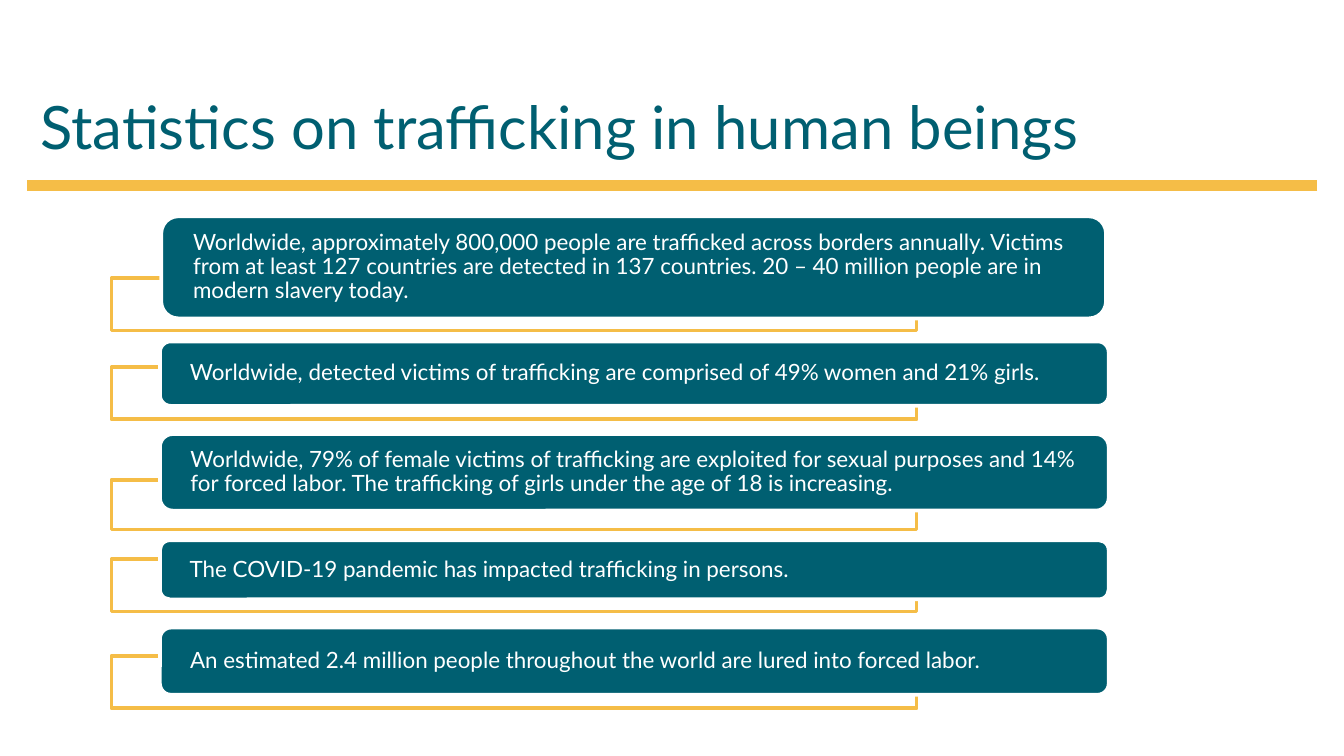
from dataclasses import dataclass

from lxml.etree import SubElement
from pptx import Presentation
from pptx.dml.color import RGBColor
from pptx.enum.shapes import MSO_CONNECTOR, MSO_SHAPE
from pptx.enum.text import MSO_ANCHOR, PP_ALIGN
from pptx.oxml.ns import qn
from pptx.util import Inches, Pt


@dataclass(frozen=True)
class Theme:
    teal: RGBColor = RGBColor.from_string("005F71")
    gold: RGBColor = RGBColor.from_string("F5BD47")
    white: RGBColor = RGBColor.from_string("FFFFFF")
    font: str = "Lato"
    head: int = 32
    body: int = 12


theme = Theme()


def style(para, size, color):
    para.alignment = PP_ALIGN.LEFT
    for run in para.runs:
        run.font.name = theme.font
        run.font.size = Pt(size)
        run.font.color.rgb = color


def add_box(group, kind, left, top, width, height, fill, line):
    box = group.shapes.add_shape(
        kind, Inches(left), Inches(top), Inches(width), Inches(height))
    box.shadow.inherit = False
    box.fill.solid()
    box.fill.fore_color.rgb = fill
    box.line.color.rgb = line
    box.line.width = Pt(2)
    return box


# Wide slide, 16 by 9
deck = Presentation()
deck.slide_width, deck.slide_height = Inches(10), Inches(10 * 9 / 16)
slide = deck.slides.add_slide(deck.slide_layouts[5])

# Title
title = slide.shapes.title
title.left, title.top = Inches(0.2), Inches(0.31)
title.width, title.height = Inches(9.6), Inches(0.94)
title.text_frame.text = "Statistics on trafficking in human beings"
title.text_frame.vertical_anchor = MSO_ANCHOR.BOTTOM
style(title.text_frame.paragraphs[0], theme.head, theme.teal)

# Rule below the title
rule = slide.shapes.add_connector(
    MSO_CONNECTOR.STRAIGHT, Inches(9.8), Inches(1.38), Inches(0.2), Inches(1.38))
rule.line.color.rgb = theme.gold
rule.line.width = Pt(6)
SubElement(rule.element.spPr, qn("a:effectLst"))

# Facts: frame top, frame height, card left, top, width, height, text
facts = [
    (2.07, 0.39, 1.2, 1.61, 7.03, 0.76,
     "Worldwide, approximately 800,000 people are trafficked across borders "
     "annually. Victims from at least 127 countries are detected in 137 "
     "countries. 20 – 40 million people are in modern slavery today."),
    (2.73, 0.39, 1.19, 2.54, 7.06, 0.48,
     "Worldwide, detected victims of trafficking are comprised of 49% women "
     "and 21% girls."),
    (3.57, 0.37, 1.19, 3.23, 7.06, 0.57,
     "Worldwide, 79% of female victims of trafficking are exploited for sexual "
     "purposes and 14% for forced labor. The trafficking of girls under the "
     "age of 18 is increasing."),
    (4.16, 0.39, 1.19, 4.02, 7.06, 0.44,
     "The COVID-19 pandemic has impacted trafficking in persons."),
    (4.88, 0.39, 1.19, 4.67, 7.06, 0.5,
     "An estimated 2.4 million people throughout the world are lured into "
     "forced labor."),
]

group = slide.shapes.add_group_shape()
for base, depth, left, top, width, height, text in facts:
    # Gold frame behind the card
    frame = add_box(group, MSO_SHAPE.RECTANGLE, 0.83, base, 5.99, depth,
                    theme.white, theme.gold)
    tint = frame.element.spPr.find(qn("a:solidFill"))[0]
    SubElement(tint, qn("a:alpha"), val="90000")

    # Teal card with its text
    card = add_box(group, MSO_SHAPE.ROUNDED_RECTANGLE, left, top, width, height,
                   theme.teal, theme.white)
    body = card.text_frame
    body.word_wrap = True
    body.vertical_anchor = MSO_ANCHOR.MIDDLE
    body.margin_left = body.margin_right = Inches(0.2)
    body.margin_top = body.margin_bottom = 0
    body.text = text
    para = body.paragraphs[0]
    para.line_spacing = 0.9
    style(para, theme.body, theme.white)

deck.save("out.pptx")
